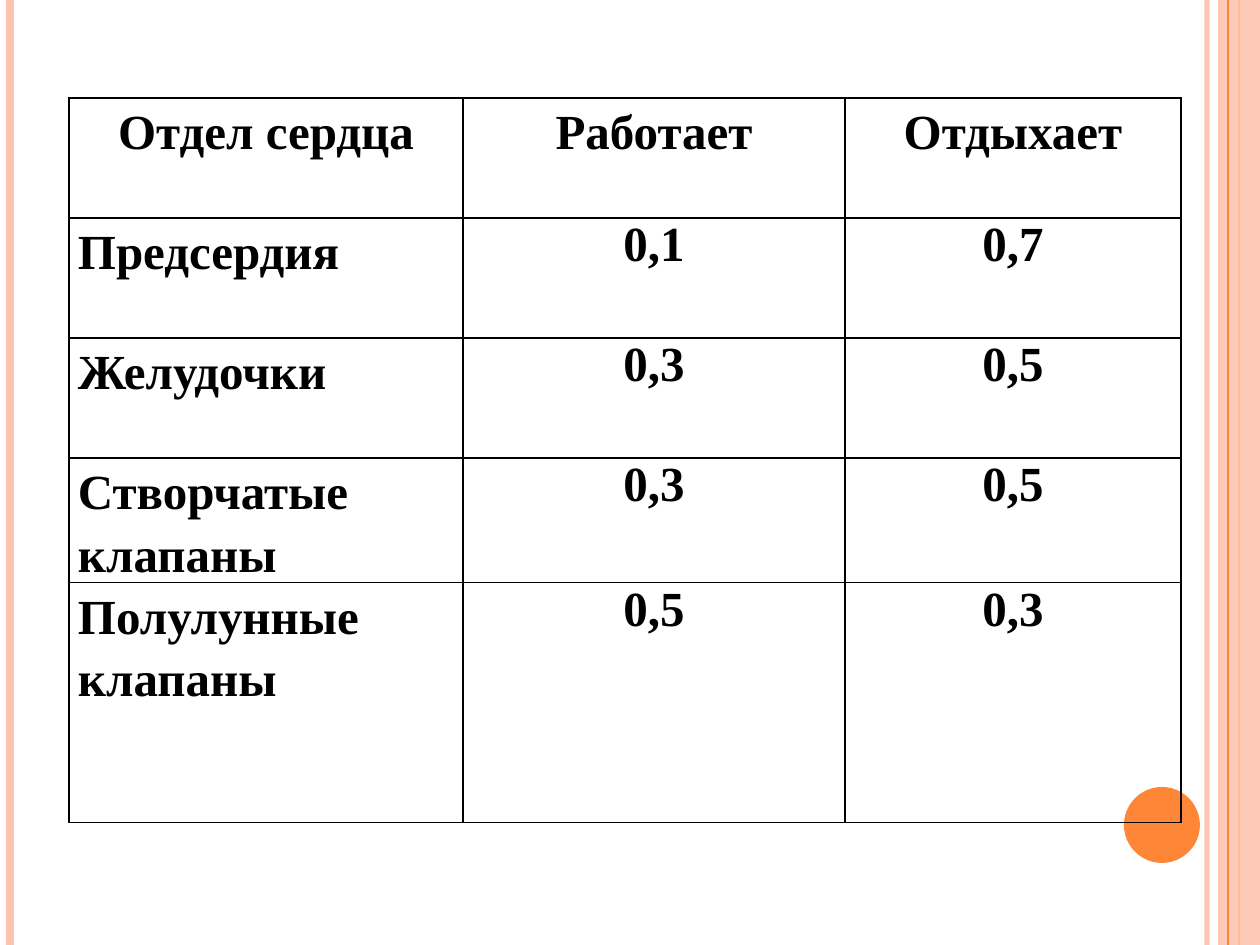
from lxml.etree import SubElement
from pptx import Presentation
from pptx.dml.color import RGBColor
from pptx.enum.shapes import MSO_CONNECTOR as Connector, MSO_SHAPE as Shape
from pptx.enum.text import PP_ALIGN as Align
from pptx.oxml import parse_xml
from pptx.oxml.ns import nsdecls, qn
from pptx.util import Pt

EMU_PER_PX = 914400 / 126
WIDTH, HEIGHT = 1260, 945
PEACH, ORANGE, BLACK = "FEC3AE", "FE8637", "000000"
COLUMNS = [394, 382, 336]
ROWS = [120, 120, 120, 120, 240]
CONTENT = [
    ["Отдел сердца", "Работает", "Отдыхает"],
    ["Предсердия", "0,1", "0,7"],
    ["Желудочки", "0,3", "0,5"],
    ["Створчатые клапаны", "0,3", "0,5"],
    ["Полулунные\nклапаны", "0,5", "0,3"],
]


def px(length):
    """Turn pixels into EMU."""
    return round(length * EMU_PER_PX)


def color(value):
    """Turn a hex string into a colour."""
    return RGBColor.from_string(value)


def set_alpha(properties, percent):
    """Make the first solid colour in the properties see-through."""
    tint = next(properties.iter(qn("a:srgbClr")))
    SubElement(tint, qn("a:alpha"), val=str(percent * 1000))


def add_stripe(page, x, width, stroke, alpha=100):
    """Draw a vertical line over the full page height."""
    stripe = page.shapes.add_connector(Connector.STRAIGHT, px(x), 0, px(x), px(HEIGHT))
    stripe.line.width = Pt(width)
    stripe.line.color.rgb = color(stroke)
    properties = stripe._element.spPr
    if alpha < 100:
        set_alpha(properties, alpha)
    SubElement(properties, qn("a:effectLst"))


def add_block(page, kind, left, top, width, height, fill, alpha=100):
    """Draw a filled shape without an outline."""
    block = page.shapes.add_shape(kind, px(left), px(top), px(width), px(height))
    block.shadow.inherit = False
    block.fill.solid()
    block.fill.fore_color.rgb = color(fill)
    block.line.fill.background()
    if alpha < 100:
        set_alpha(block._element.spPr, alpha)


def write(frame, text, size=28, font="Times New Roman", bold=True, ink=BLACK,
          align=Align.LEFT, spacing=1.0):
    """Write text into a frame, one paragraph a line."""
    frame.text = text
    for para in frame.paragraphs:
        para.alignment = align
        para.line_spacing = spacing
        for span in para.runs:
            span.font.size = Pt(size)
            span.font.name = font
            span.font.bold = bold
            span.font.color.rgb = color(ink)


def format_cell(cell):
    """Clear the fill, set the margins and rule all four sides."""
    cell.margin_left = cell.margin_right = px(9)
    cell.margin_top = cell.margin_bottom = 0
    cell.fill.background()
    properties = cell._tc.get_or_add_tcPr()
    for index, side in enumerate(["lnL", "lnR", "lnT", "lnB"]):
        properties.insert(index, parse_xml(
            f'<a:{side} {nsdecls("a")} w="{Pt(1)}"><a:solidFill>'
            f'<a:srgbClr val="{BLACK}"/></a:solidFill></a:{side}>'))


def add_heart_table(page, left, top):
    """Add the table of work and rest times of the heart."""
    frame = page.shapes.add_table(len(ROWS), len(COLUMNS), px(left), px(top),
                                  px(sum(COLUMNS)), px(sum(ROWS)))
    table = frame.table
    table.first_row = table.horz_banding = False
    for column, width in zip(table.columns, COLUMNS):
        column.width = px(width)
    for row, height in zip(table.rows, ROWS):
        row.height = px(height)
    for r, texts in enumerate(CONTENT):
        for c, text in enumerate(texts):
            cell = table.cell(r, c)
            format_cell(cell)
            write(cell.text_frame, text,
                  align=Align.LEFT if r and not c else Align.CENTER,
                  spacing=1.0 if r and c else 1.15)


def main():
    """Build the slide and save it."""
    deck = Presentation()
    deck.slide_width, deck.slide_height = px(WIDTH), px(HEIGHT)
    page = deck.slides.add_slide(deck.slide_layouts[6])
    add_stripe(page, 1207, 3, PEACH, alpha=93)
    add_stripe(page, 10, 4.5, PEACH)
    add_stripe(page, 1239, 1.5, ORANGE)
    add_block(page, Shape.RECTANGLE, 1218, 0, 42, HEIGHT, PEACH, alpha=87)
    add_stripe(page, 1228, 0.75, ORANGE)
    add_block(page, Shape.OVAL, 1124, 787, 76, 76, ORANGE)
    add_heart_table(page, 69, 98)
    deck.save("out.pptx")


if __name__ == "__main__":
    main()
